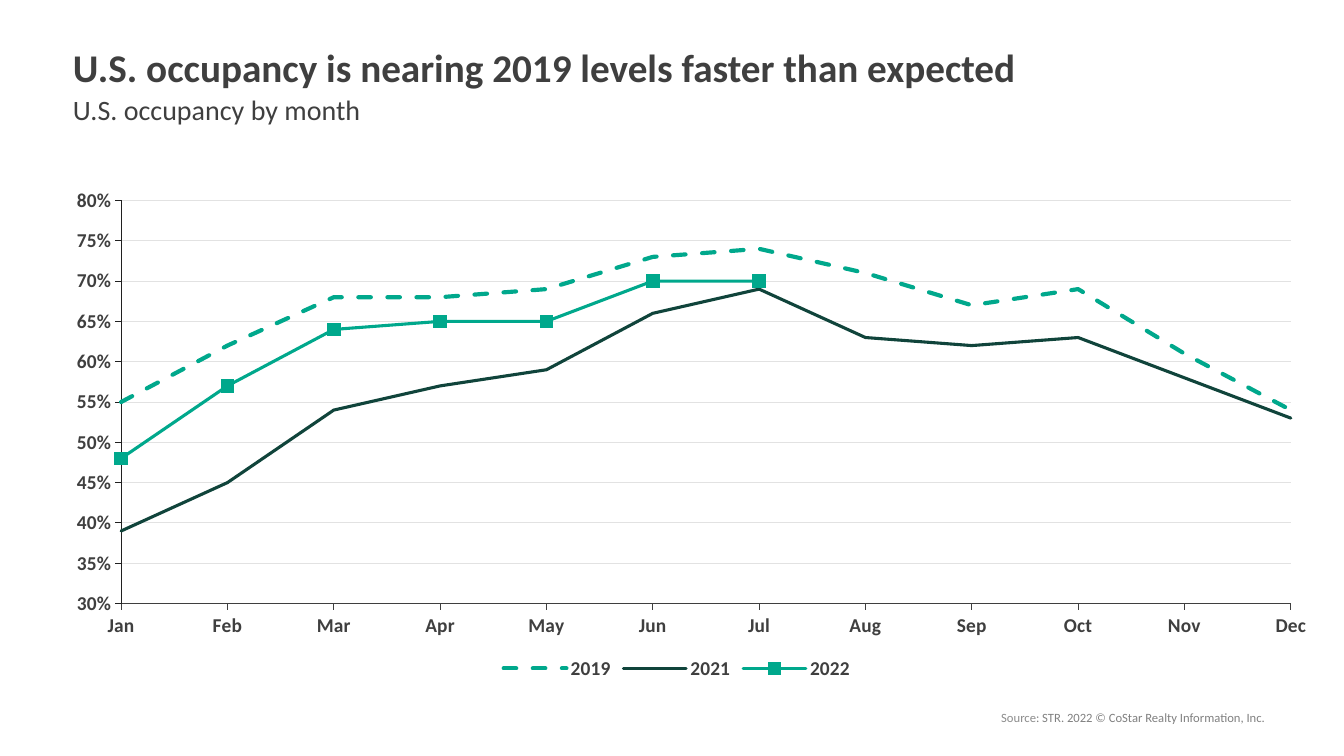
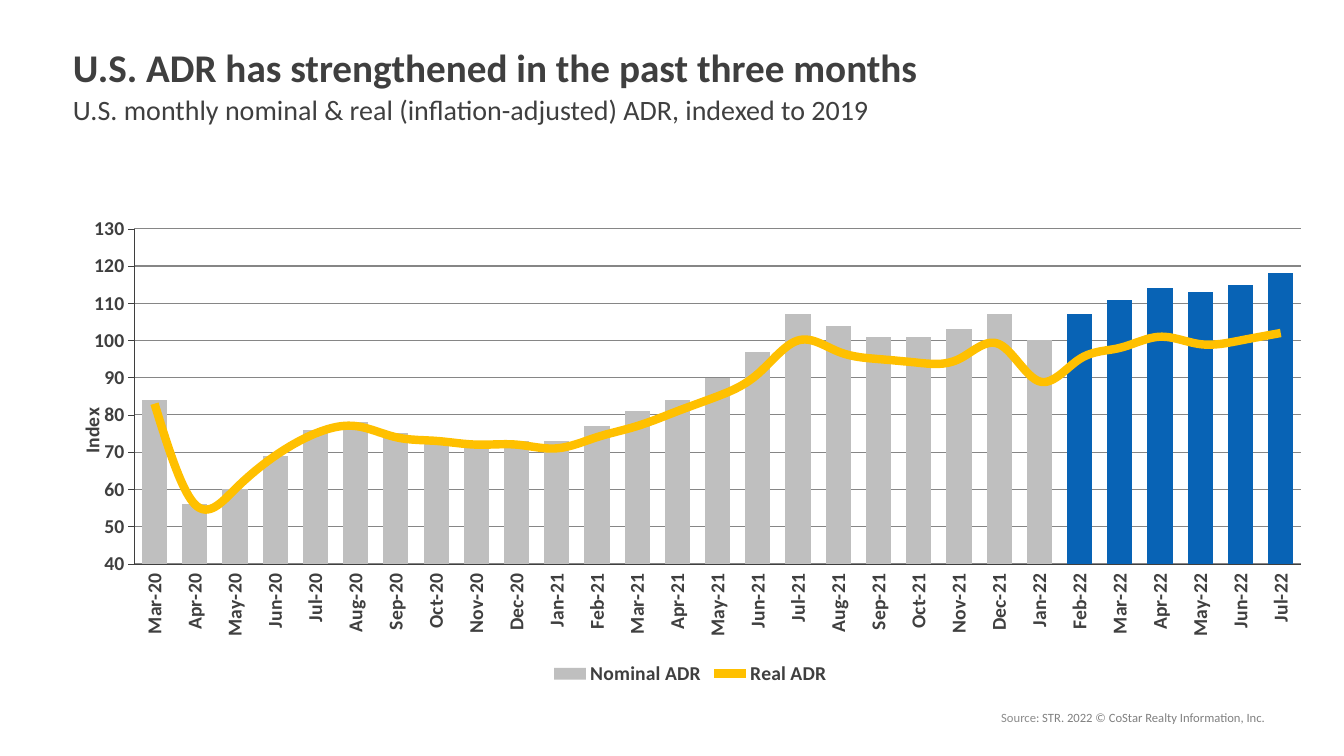
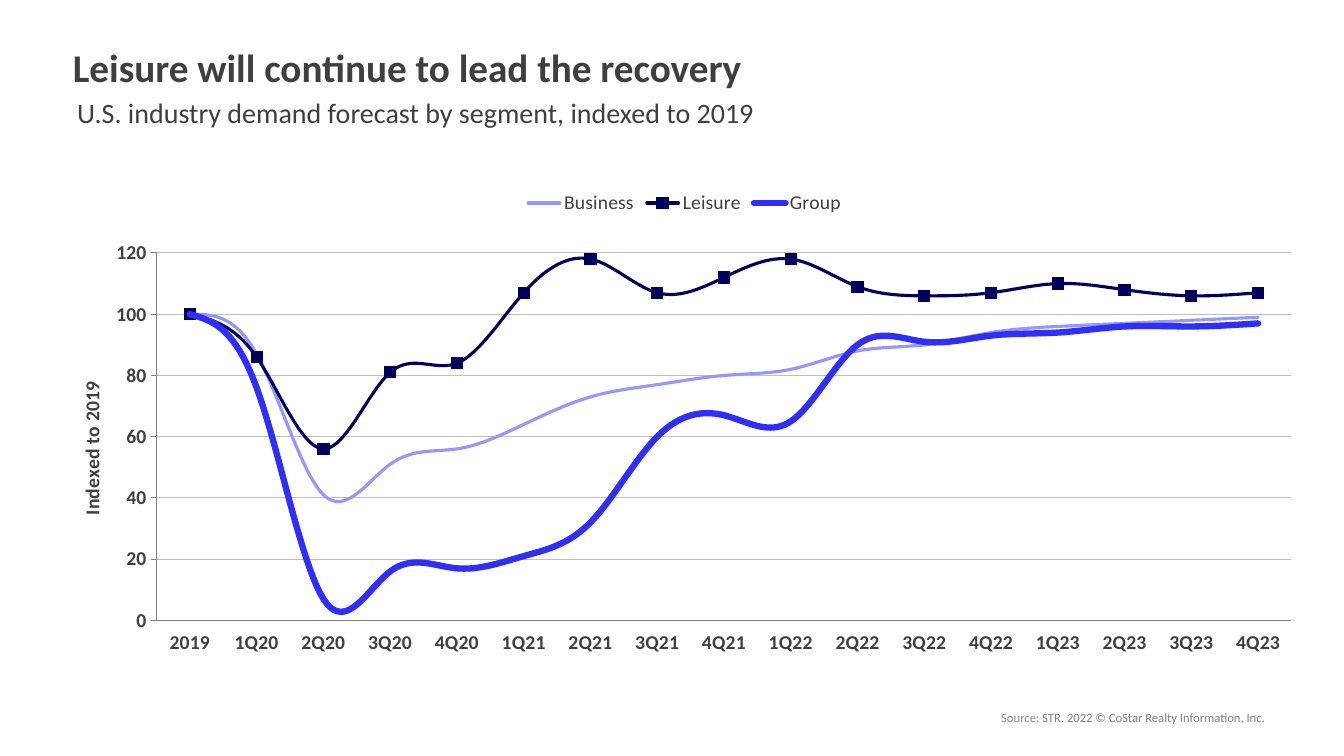
import dataclasses
import itertools

import pptx
import pptx.chart.data
import pptx.dml.color
import pptx.enum.chart
import pptx.enum.dml
import pptx.enum.text
import pptx.oxml
import pptx.oxml.ns
import pptx.util

PX = 9525
CHART_TYPE = pptx.enum.chart.XL_CHART_TYPE
TICK = pptx.enum.chart.XL_TICK_MARK
MARKER = pptx.enum.chart.XL_MARKER_STYLE
LEGEND = pptx.enum.chart.XL_LEGEND_POSITION
ALIGN = pptx.enum.text.PP_ALIGN
CHART_NS = pptx.oxml.ns.nsdecls("c")
MONTHS = ["Jan", "Feb", "Mar", "Apr", "May", "Jun", "Jul", "Aug", "Sep", "Oct", "Nov", "Dec"]


@dataclasses.dataclass(frozen=True)
class Theme:
    """Colours and type sizes shared by all slides."""

    font: str = "Calibri"
    title_size: int = 28
    subtitle_size: int = 20
    label_size: int = 14
    footer_size: int = 9
    title_leading: float = 26.7
    ink: str = "3F3F3F"
    source: str = "8C8C8C"
    gray: str = "808080"
    axis_dark: str = "202020"
    grid_pale: str = "E2E2E2"
    grid_light: str = "BFBFBF"
    grid_dark: str = "868686"
    teal: str = "00A88C"
    forest: str = "10443B"
    silver: str = "BFBFBF"
    blue: str = "0863B5"
    gold: str = "FFC000"
    lilac: str = "9696FF"
    navy: str = "00005B"
    violet: str = "2E2EFF"


THEME = Theme()


@dataclasses.dataclass(frozen=True)
class Line:
    """Look of one plotted line."""

    color: str
    width: float = 2.25
    dashed: bool = False
    marker: int = 0
    smooth: bool = False
    rounded: bool = True


def rgb(color):
    """Turn a hex string into a colour."""
    return pptx.dml.color.RGBColor.from_string(color)


def emu(box):
    """Turn lengths in px into EMU."""
    return [pptx.util.Emu(length * PX) for length in box]


def style_font(font, size, color=THEME.ink, bold=False):
    """Set face, size, weight and colour of a font."""
    font.name, font.size, font.bold = THEME.font, pptx.util.Pt(size), bold
    font.color.rgb = rgb(color)


def style_line(line, color, width):
    """Set colour and width of a line."""
    line.color.rgb = rgb(color)
    line.width = pptx.util.Pt(width)


def write_text(page, box, *spans, size, bold=False, align=ALIGN.LEFT, leading=None, anchor="MIDDLE"):
    """Place one paragraph made of (text, colour) spans."""
    frame = page.shapes.add_textbox(*emu(box)).text_frame
    frame.word_wrap = True
    frame.vertical_anchor = pptx.enum.text.MSO_ANCHOR[anchor]
    para = frame.paragraphs[0]
    para.alignment = align
    if leading:
        para.line_spacing = pptx.util.Pt(leading)
    for text, color in spans:
        span = para.add_run()
        span.text = text
        style_font(span.font, size, color, bold)


def add_page(deck, title, subtitle, subtitle_box, subtitle_leading=None):
    """Add a slide with its heading and the shared source line."""
    page = deck.slides.add_slide(deck.slide_layouts[6])
    write_text(page, (60, 45, 1094, 47), (title, THEME.ink), size=THEME.title_size,
               bold=True, leading=THEME.title_leading)
    write_text(page, subtitle_box, (subtitle, THEME.ink), size=THEME.subtitle_size,
               leading=subtitle_leading)
    write_text(page, (51, 671, 1163, 24), ("Source", THEME.source),
               (": STR. 2022 © CoStar Realty Information, Inc.", THEME.gray),
               size=THEME.footer_size, align=ALIGN.RIGHT, anchor="TOP")
    return page


def set_layout(node, chart_box, place):
    """Fix a chart part at a place in px within the chart box."""
    layout = node.find(pptx.oxml.ns.qn("c:layout"))
    if layout is None:
        layout = pptx.oxml.parse_xml(f"<c:layout {CHART_NS}/>")
        node.insert(0, layout)
    for child in list(layout):
        layout.remove(child)
    target = '<c:layoutTarget val="inner"/>' if len(place) == 4 else ""
    modes = '<c:xMode val="edge"/><c:yMode val="edge"/>'
    sizes = "".join(f'<c:{key} val="{length / whole:.4f}"/>'
                    for key, length, whole in zip("xywh", place, chart_box[2:] * 2))
    layout.append(pptx.oxml.parse_xml(
        f"<c:manualLayout {CHART_NS}>{target}{modes}{sizes}</c:manualLayout>"))


def add_chart(page, box, plot_box, kind, categories, series, number_format="General"):
    """Add a chart with a fixed plot area and return it."""
    data = pptx.chart.data.CategoryChartData(number_format=number_format)
    data.categories = categories
    for name, values in series.items():
        data.add_series(name, values)
    chart = page.shapes.add_chart(kind, *emu(box), data).chart
    chart.has_title = False
    style_font(chart.font, THEME.label_size)
    chart.plots[0].vary_by_categories = False
    set_layout(chart._chartSpace.chart.plotArea, box, plot_box)
    return chart


def set_crossing(value_axis, mode):
    """Make the value axis cross on or between the categories."""
    node = value_axis._element
    for old in node.xpath("c:crossBetween"):
        node.remove(old)
    node.xpath("c:crossAx|c:crosses")[-1].addnext(
        pptx.oxml.parse_xml(f'<c:crossBetween {CHART_NS} val="{mode}"/>'))


def style_axes(chart, limits, step, number_format, category_line, value_line, grid,
               width=0.75, category_tick=TICK.NONE, crossing="between"):
    """Set scale, ticks, labels and lines of both axes."""
    category, value = chart.category_axis, chart.value_axis
    set_crossing(value, crossing)
    value.minimum_scale, value.maximum_scale = limits
    value.major_unit = step
    value.tick_labels.number_format = number_format
    value.tick_labels.number_format_is_linked = False
    value.has_major_gridlines = True
    style_line(value.major_gridlines.format.line, grid, 0.75)
    category.tick_label_position = pptx.enum.chart.XL_TICK_LABEL_POSITION.LOW
    for axis, color, tick in ((category, category_line, category_tick),
                              (value, value_line, TICK.OUTSIDE)):
        axis.major_tick_mark, axis.minor_tick_mark = tick, TICK.NONE
        style_font(axis.tick_labels.font, THEME.label_size, bold=True)
        style_line(axis.format.line, color, width)


def title_value_axis(chart, text, chart_box, place):
    """Put an upright title beside the value axis."""
    title = chart.value_axis.axis_title
    frame = title.text_frame
    frame._txBody.bodyPr.set("rot", "-5400000")
    span = frame.paragraphs[0].add_run()
    span.text = text
    style_font(span.font, THEME.label_size, bold=True)
    set_layout(title._element, chart_box, place)


def add_legend(chart, position, bold):
    """Show the legend outside the plot area."""
    chart.has_legend = True
    chart.legend.position = position
    chart.legend.include_in_layout = False
    style_font(chart.legend.font, THEME.label_size, bold=bold)


def style_series(series, look):
    """Apply the look of a line to a series."""
    line = series.format.line
    style_line(line, look.color, look.width)
    if look.rounded:
        line._get_or_add_ln().set("cap", "rnd")
    if look.dashed:
        line.dash_style = pptx.enum.dml.MSO_LINE.DASH
    series.smooth = look.smooth
    series.marker.style = MARKER.SQUARE if look.marker else MARKER.NONE
    if look.marker:
        series.marker.size = look.marker
        series.marker.format.fill.solid()
        series.marker.format.fill.fore_color.rgb = rgb(look.color)
        style_line(series.marker.format.line, look.color, 0.75)


def move_last_to_line(chart):
    """Turn the last column series into a line on the same axes."""
    bars = chart.plots[0]._element
    series = bars.findall(pptx.oxml.ns.qn("c:ser"))[-1]
    for flag in series.xpath("c:invertIfNegative"):
        series.remove(flag)
    axes = "".join(f'<c:axId val="{axis.get("val")}"/>'
                   for axis in bars.findall(pptx.oxml.ns.qn("c:axId")))
    lines = pptx.oxml.parse_xml(
        f'<c:lineChart {CHART_NS}><c:grouping val="standard"/><c:varyColors val="0"/>'
        f'<c:marker val="1"/>{axes}</c:lineChart>')
    lines.insert(2, series)
    bars.addnext(lines)
    return chart.plots[1].series[0]


def build_occupancy(deck):
    """Build the monthly occupancy slide."""
    page = add_page(deck, "U.S. occupancy is nearing 2019 levels faster than expected",
                    "U.S. occupancy by month", (60, 86, 1184, 32), THEME.title_leading)
    series = {
        "2019": [0.55, 0.62, 0.68, 0.68, 0.69, 0.73, 0.74, 0.71, 0.67, 0.69, 0.61, 0.54],
        "2021": [0.39, 0.45, 0.54, 0.57, 0.59, 0.66, 0.69, 0.63, 0.62, 0.63, 0.58, 0.53],
        "2022": [0.48, 0.57, 0.64, 0.65, 0.65, 0.7, 0.7] + [None] * 5,
    }
    looks = [Line(THEME.teal, 3, dashed=True), Line(THEME.forest), Line(THEME.teal, marker=9)]
    chart = add_chart(page, (60, 169, 1184, 483), (56, 22, 1128, 384),
                      CHART_TYPE.LINE, MONTHS, series, "0%")
    style_axes(chart, (0.3, 0.8), 0.05, "0%", THEME.ink, THEME.axis_dark, THEME.grid_pale,
               category_tick=TICK.OUTSIDE, crossing="midCat")
    add_legend(chart, LEGEND.BOTTOM, bold=True)
    for plotted, look in zip(chart.plots[0].series, looks):
        style_series(plotted, look)


def build_rates(deck):
    """Build the nominal and real rate slide."""
    page = add_page(deck, "U.S. ADR has strengthened in the past three months",
                    "U.S. monthly nominal & real (inflation-adjusted) ADR, indexed to 2019",
                    (60, 88, 1184, 32))
    calendar = [f"{month}-{year}" for year, month in itertools.product((20, 21, 22), MONTHS)]
    series = {
        "Nominal ADR": [84, 56, 60, 69, 76, 78, 75, 73, 73, 73, 73, 77, 81, 84, 90, 97, 107, 104,
                        101, 101, 103, 107, 100, 107, 111, 114, 113, 115, 118],
        "Real ADR": [83, 56, 60, 69, 75, 77, 74, 73, 72, 72, 71, 74, 77, 81, 85, 91, 100, 97,
                     95, 94, 95, 99, 89, 95, 98, 101, 99, 100, 102],
    }
    box = (60, 168, 1195, 489)
    chart = add_chart(page, box, (68, 50, 1111, 319), CHART_TYPE.COLUMN_CLUSTERED,
                      calendar[2:31], series)
    style_axes(chart, (40, 130), 10, "#,##0", THEME.ink, THEME.ink, THEME.grid_dark, width=0.27)
    for body in chart.category_axis._element.xpath("c:txPr/a:bodyPr"):
        body.set("rot", "-5400000")
    title_value_axis(chart, "Index", box, (11, 217))
    add_legend(chart, LEGEND.BOTTOM, bold=True)
    style_series(move_last_to_line(chart), Line(THEME.gold, 6, smooth=True, rounded=False))
    chart.plots[0].gap_width = 60
    nominal = chart.plots[0].series[0]
    recent = [nominal.points[index] for index in range(23, 29)]
    for part, color in [(nominal, THEME.silver)] + [(point, THEME.blue) for point in recent]:
        part.format.fill.solid()
        part.format.fill.fore_color.rgb = rgb(color)


def build_segments(deck):
    """Build the demand forecast slide."""
    page = add_page(deck, "Leisure will continue to lead the recovery",
                    "U.S. industry demand forecast by segment, indexed to 2019",
                    (64, 86, 1069, 42))
    quarters = [f"{quarter}Q{year}" for year in range(20, 24) for quarter in range(1, 5)]
    series = {
        "Business": [100, 87, 41, 51, 56, 64, 73, 77, 80, 82, 88, 90, 94, 96, 97, 98, 99],
        "Leisure": [100, 86, 56, 81, 84, 107, 118, 107, 112, 118, 109, 106, 107, 110, 108, 106, 107],
        "Group": [100, 76, 7, 16, 17, 21, 32, 60, 67, 65, 90, 91, 93, 94, 96, 96, 97],
    }
    looks = [Line(THEME.lilac, smooth=True), Line(THEME.navy, marker=8, smooth=True),
             Line(THEME.violet, 4.5, smooth=True)]
    box = (60, 171, 1184, 481)
    chart = add_chart(page, box, (89, 70, 1081, 350), CHART_TYPE.LINE, ["2019"] + quarters, series)
    style_axes(chart, (0, 120), 20, "#,##0", THEME.gray, THEME.gray, THEME.grid_light)
    title_value_axis(chart, "Indexed to 2019", box, (11, 189))
    add_legend(chart, LEGEND.TOP, bold=False)
    for plotted, look in zip(chart.plots[0].series, looks):
        style_series(plotted, look)


def main():
    """Build and save the deck."""
    deck = pptx.Presentation()
    deck.slide_width, deck.slide_height = emu((1280, 720))
    for build in (build_occupancy, build_rates, build_segments):
        build(deck)
    deck.save("out.pptx")


if __name__ == "__main__":
    main()
